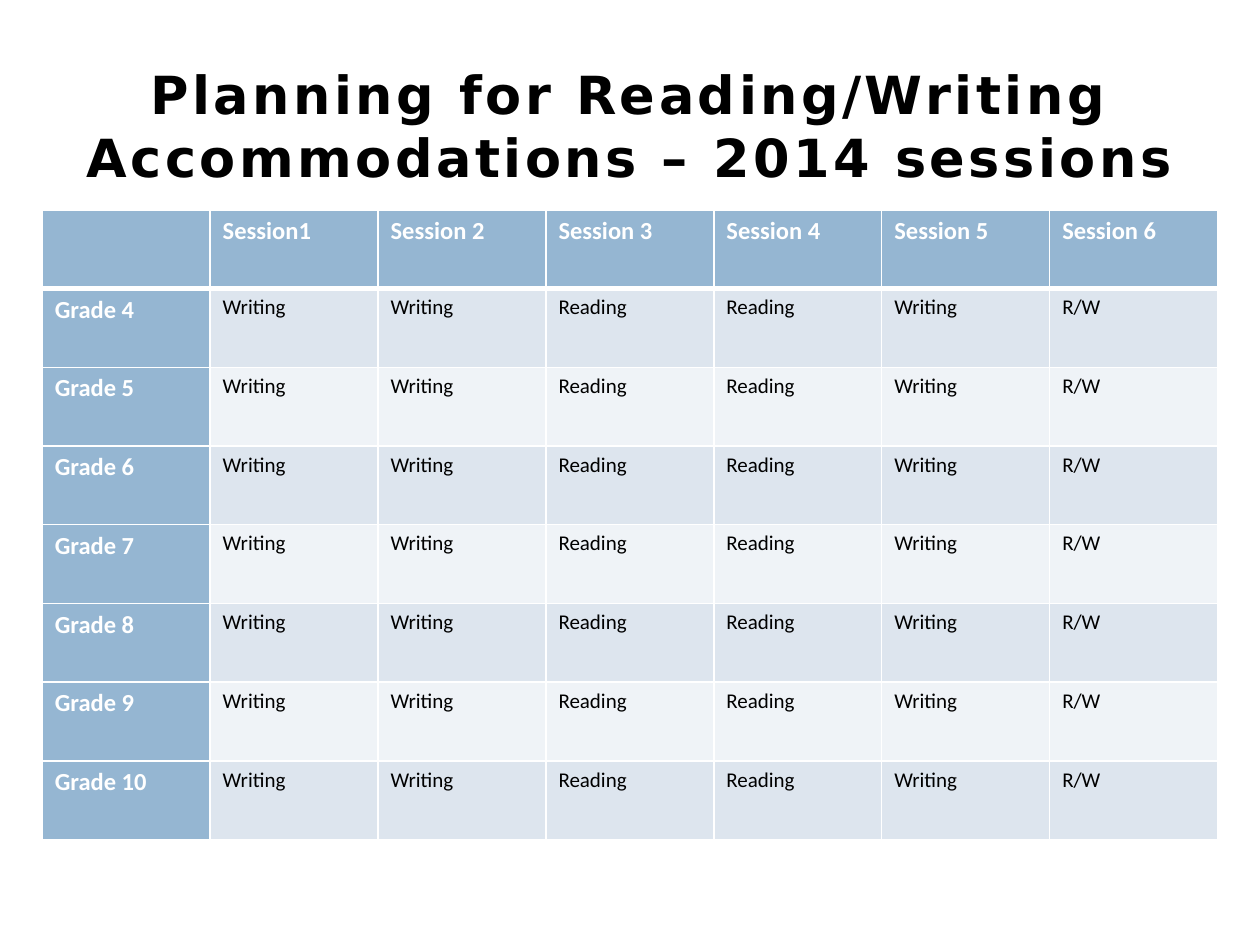
from dataclasses import dataclass

from lxml import etree
from pptx import Presentation
from pptx.dml.color import RGBColor
from pptx.enum.text import MSO_ANCHOR, PP_ALIGN
from pptx.oxml.ns import qn
from pptx.util import Cm, Pt


@dataclass(frozen=True)
class Theme:
    title_font: str = "DejaVu Sans"
    table_font: str = "Calibri"
    title_size: int = 30
    heading_size: int = 14
    body_size: int = 12
    black: str = "000000"
    white: str = "FFFFFF"
    heading_fill: str = "95B6D2"
    bands: tuple = ("DDE5EE", "EFF3F7")


def write_text(frame, text, font, size, color, bold=False,
               align=PP_ALIGN.LEFT, spacing=0):
    """Fill the frame with one paragraph; spacing is points between letters."""
    paragraph = frame.paragraphs[0]
    paragraph.alignment = align
    run = paragraph.add_run()
    run.text = text
    run.font.name = font
    run.font.size = Pt(size)
    run.font.bold = bold
    run.font.color.rgb = RGBColor.from_string(color)
    if spacing:
        run.font._element.set("spc", str(spacing * 100))


def add_borders(cell, color, **widths):
    """Draw cell borders; widths are points by side (L, R, T, B)."""
    properties = cell._tc.get_or_add_tcPr()
    for side, width in widths.items():
        line = etree.SubElement(properties, qn(f"a:ln{side}"), w=str(Pt(width)))
        fill = etree.SubElement(line, qn("a:solidFill"))
        etree.SubElement(fill, qn("a:srgbClr"), val=color)


theme = Theme()
presentation = Presentation()
presentation.slide_width = Cm(25.4)
presentation.slide_height = Cm(19.05)
slide = presentation.slides.add_slide(presentation.slide_layouts[6])

# Title
title = slide.shapes.add_textbox(Cm(1.27), Cm(1.06), Cm(22.86), Cm(3.18))
title_frame = title.text_frame
title_frame.word_wrap = True
title_frame.vertical_anchor = MSO_ANCHOR.MIDDLE
title_frame.margin_bottom = Cm(0.4)
write_text(title_frame, "Planning for Reading/Writing Accommodations – 2014 sessions",
           font=theme.title_font, size=theme.title_size, color=theme.black,
           bold=True, align=PP_ALIGN.CENTER, spacing=2)

# Session plan: every grade follows the same order of subjects
sessions = ["", "Session1"] + [f"Session {number}" for number in range(2, 7)]
subjects = ["Writing", "Writing", "Reading", "Reading", "Writing", "R/W"]
plan = [sessions] + [[f"Grade {grade}"] + subjects for grade in range(4, 11)]

table = slide.shapes.add_table(len(plan), len(sessions), Cm(0.85), Cm(4.23),
                               Cm(23.7), Cm(12.7)).table
for row_index, row in enumerate(plan):
    for column_index, text in enumerate(row):
        cell = table.cell(row_index, column_index)
        is_heading = row_index == 0 or column_index == 0
        add_borders(cell, theme.white, L=1, R=1,
                    T=3 if row_index == 1 else 1,
                    B=3 if row_index == 0 else 1)
        band = theme.bands[(row_index - 1) % 2]
        cell.fill.solid()
        cell.fill.fore_color.rgb = RGBColor.from_string(
            theme.heading_fill if is_heading else band)
        if text:
            write_text(cell.text_frame, text, font=theme.table_font,
                       size=theme.heading_size if is_heading else theme.body_size,
                       color=theme.white if is_heading else theme.black,
                       bold=is_heading)

presentation.save("out.pptx")
